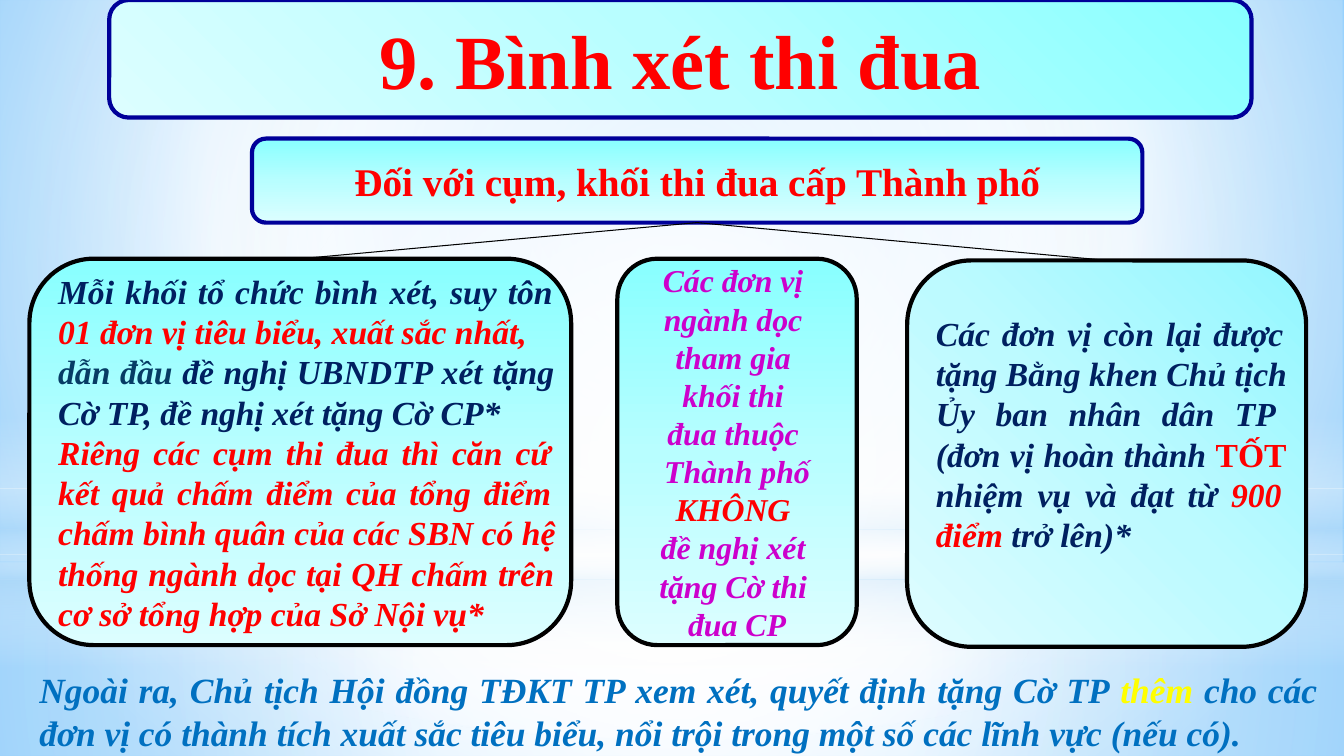
from dataclasses import dataclass
from itertools import pairwise

from lxml.etree import SubElement
from pptx import Presentation
from pptx.dml.color import RGBColor
from pptx.enum.shapes import MSO_CONNECTOR, MSO_SHAPE
from pptx.enum.text import MSO_ANCHOR, PP_ALIGN
from pptx.oxml.ns import qn
from pptx.util import Inches, Pt

COLUMNS, ROWS = 160, 90
SLIDE_WIDTH, SLIDE_HEIGHT = Inches(13.333), Inches(7.5)


@dataclass(frozen=True)
class Theme:
    """Colours, gradients and type sizes of the slide."""

    font: str = "Times New Roman"
    red: str = "FF0000"
    navy: str = "002060"
    teal: str = "073C65"
    purple: str = "CC00CC"
    blue: str = "0070C0"
    yellow: str = "FFFF00"
    border: str = "000099"
    black: str = "000000"
    title_size: float = 54.7
    heading_size: float = 28
    panel_size: float = 24
    middle_size: float = 22.7
    note_size: float = 25.3
    aqua: tuple = ((0, "88FFFF"), (50, "B8FEFF"), (100, "DCFEFF"))
    pale_aqua: tuple = ((0, "93F7FF"), (50, "BDFAFF"), (100, "DEFCFF"))
    sky: tuple = ((0, "9ED5FF"), (60, "FFFFFF"), (100, "5BB9FF"))
    floor: tuple = ((0, "FFFFFF", 91), (37, "FFFFFF", 76), (100, "B4DCFA", 79))
    wall: tuple = ((0, "FFFFFF", 89), (48, "FFFFFF", 62), (100, "B4DCFA", 79))
    horizon: tuple = ((0, "FFFFFF", 0), (29, "FFFFFF", 30), (45, "B4DCFA", 40),
                      (55, "FFFFFF", 26), (65, "B4DCFA", 60), (100, "FFFFFF", 0))
    glow: tuple = ((0, "FFFFFF"), (56, "FFFFFF", 0))


THEME = Theme()
CENTRE = (50, 50, 50, 50)


def place(left, top, width, height):
    """Turn grid columns and rows into slide lengths."""
    column, row = SLIDE_WIDTH / COLUMNS, SLIDE_HEIGHT / ROWS
    return int(left * column), int(top * row), int(width * column), int(height * row)


def set_gradient(properties, stops, angle=None, focus=None):
    """Swap the empty fill for a linear or a circular gradient."""
    empty_fill = properties.find(qn("a:noFill"))
    gradient = SubElement(properties, qn("a:gradFill"), rotWithShape="1")
    properties.replace(empty_fill, gradient)
    stop_list = SubElement(gradient, qn("a:gsLst"))
    for position, color, *opacity in stops:
        stop = SubElement(stop_list, qn("a:gs"), pos=str(position * 1000))
        tint = SubElement(stop, qn("a:srgbClr"), val=color)
        for share in opacity:
            SubElement(tint, qn("a:alpha"), val=str(share * 1000))
    if focus is None:
        SubElement(gradient, qn("a:lin"), ang=str(angle * 60000), scaled="0")
    else:
        circle = SubElement(gradient, qn("a:path"), path="circle")
        edges = {side: str(share * 1000) for side, share in zip("ltrb", focus)}
        SubElement(circle, qn("a:fillToRect"), **edges)


def add_area(slide, kind, cell, stops, angle=None, focus=None, border=None):
    """Add a gradient shape with an optional border."""
    area = slide.shapes.add_shape(kind, *place(*cell))
    area.shadow.inherit = False
    area.fill.background()
    set_gradient(area.element.spPr, stops, angle, focus)
    if border:
        area.line.color.rgb = RGBColor.from_string(border)
        area.line.width = Pt(3)
    else:
        area.line.fill.background()
    return area


def add_text(paragraph, text, *, size, color, italic=True):
    """Add bold text to a paragraph, with a line break at each newline."""
    for index, line in enumerate(text.split("\n")):
        if index:
            paragraph.add_line_break()
        if line:
            run = paragraph.add_run()
            run.text = line
            run.font.name = THEME.font
            run.font.size = Pt(size)
            run.font.bold = True
            run.font.italic = italic
            run.font.color.rgb = RGBColor.from_string(color)


def write(frame, paragraphs, size, align, italic=True):
    """Fill a text frame with paragraphs of (text, colour, italic) pieces."""
    for index, pieces in enumerate(paragraphs):
        paragraph = frame.add_paragraph() if index else frame.paragraphs[0]
        paragraph.alignment = align
        for text, color, *slant in pieces:
            add_text(paragraph, text, size=size, color=color,
                     italic=slant[0] if slant else italic)


def add_box(slide, cell, paragraphs, size, align=PP_ALIGN.CENTER, italic=True,
            stops=THEME.aqua, angle=90, focus=None, border=THEME.black):
    """Add a rounded box holding vertically centred text."""
    box = add_area(slide, MSO_SHAPE.ROUNDED_RECTANGLE, cell, stops, angle, focus, border)
    box.text_frame.word_wrap = False
    box.text_frame.vertical_anchor = MSO_ANCHOR.MIDDLE
    write(box.text_frame, paragraphs, size, align, italic)
    return box


def add_branch(slide, heading, panel):
    """Join the bottom of the heading to the top of a panel."""
    branch = slide.shapes.add_connector(MSO_CONNECTOR.STRAIGHT, 0, 0, 0, 0)
    branch.begin_connect(heading, 2)
    branch.end_connect(panel, 0)
    branch.line.color.rgb = RGBColor.from_string(THEME.black)
    branch.line.width = Pt(0.75)
    SubElement(branch.element.spPr, qn("a:effectLst"))


def add_horizon(slide, top, height):
    """Stack one two-colour band for each pair of neighbouring horizon stops."""
    for (start, *upper), (end, *lower) in pairwise(THEME.horizon):
        cell = (0, top + height * start / 100, COLUMNS, height * (end - start) / 100)
        add_area(slide, MSO_SHAPE.RECTANGLE, cell, ((0, *upper), (100, *lower)), angle=90)


def add_backdrop(slide):
    """Paint the sky background and its soft light layers."""
    slide.background.fill.background()
    set_gradient(slide.element.find(".//" + qn("p:bgPr")), THEME.sky, focus=(20, 10, 20, 60))
    add_area(slide, MSO_SHAPE.RECTANGLE, (0, 67, COLUMNS, 23), THEME.floor, focus=CENTRE)
    add_area(slide, MSO_SHAPE.RECTANGLE, (0, 0, COLUMNS, 67), THEME.wall, focus=CENTRE)
    add_horizon(slide, 49.5, 30)
    add_area(slide, MSO_SHAPE.OVAL, (0, 21, COLUMNS, 67), THEME.glow, focus=CENTRE)


def add_note(slide, cell, pieces):
    """Add the justified closing note."""
    note = slide.shapes.add_textbox(*place(*cell))
    note.text_frame.word_wrap = True
    write(note.text_frame, [pieces], THEME.note_size, PP_ALIGN.JUSTIFY)


def main():
    """Build the slide and save it."""
    deck = Presentation()
    deck.slide_width, deck.slide_height = SLIDE_WIDTH, SLIDE_HEIGHT
    slide = deck.slides.add_slide(deck.slide_layouts[6])
    red, navy, purple = THEME.red, THEME.navy, THEME.purple
    add_backdrop(slide)
    add_box(slide, (13, 0, 136, 14), [[("9. Bình xét thi đua", red)]],
            THEME.title_size, italic=False, angle=135, border=THEME.border)
    heading = add_box(slide, (30, 16.5, 106, 10),
                      [[("Đối với cụm, khối thi đua cấp Thành phố", red)]],
                      THEME.heading_size, italic=False, border=THEME.border)
    leading_unit = add_box(slide, (3.5, 30.8, 64.5, 46), [
        [("Mỗi khối tổ chức bình xét, suy tôn \n", navy),
         ("01 đơn vị tiêu biểu, xuất sắc nhất, ", red)],
        [("dẫn đầu ", THEME.teal),
         ("đề nghị UBNDTP xét tặng \nCờ TP, đề nghị xét tặng Cờ CP*", navy)],
        [("Riêng các cụm thi đua thì căn cứ \nkết quả chấm điểm của tổng điểm \n"
          "chấm bình quân của các SBN có hệ \nthống ngành dọc tại QH chấm trên \n"
          "cơ sở tổng hợp của Sở Nội vụ*", red)],
    ], THEME.panel_size, PP_ALIGN.JUSTIFY)
    other_units = add_box(slide, (108, 31, 47.5, 46), [
        [("Các đơn vị còn lại được \ntặng Bằng khen Chủ tịch \n"
          "Ủy ban nhân dân TP \n(đơn vị hoàn thành ", navy),
         ("TỐT \n", red, False), ("nhiệm vụ và đạt từ ", navy),
         ("900 \nđiểm", red), (" trở lên)*", navy)],
    ], THEME.panel_size, PP_ALIGN.JUSTIFY, stops=THEME.pale_aqua, focus=(100, 0, 0, 100))
    other_units.text_frame.margin_bottom = int(SLIDE_HEIGHT * 0.06)
    for panel in (leading_unit, other_units):
        add_branch(slide, heading, panel)
    vertical_lines = ("Các đơn vị ", "ngành dọc ", "tham gia ", "khối thi ", "đua thuộc ",
                      "Thành phố", "KHÔNG ", "đề nghị xét ", "tặng Cờ thi ", "đua CP")
    add_box(slide, (73.5, 30.8, 28.5, 46),
            [[(line, red if line == "KHÔNG " else purple)] for line in vertical_lines],
            THEME.middle_size)
    add_note(slide, (3.5, 79, 154.5, 7), [
        ("Ngoài ra, Chủ tịch Hội đồng TĐKT TP xem xét, quyết định tặng Cờ TP ", THEME.blue),
        ("thêm", THEME.yellow),
        (" cho các đơn vị có thành tích xuất sắc tiêu biểu, nổi trội trong một số "
         "các lĩnh vực (nếu có). ", THEME.blue)])
    deck.save("out.pptx")


if __name__ == "__main__":
    main()
